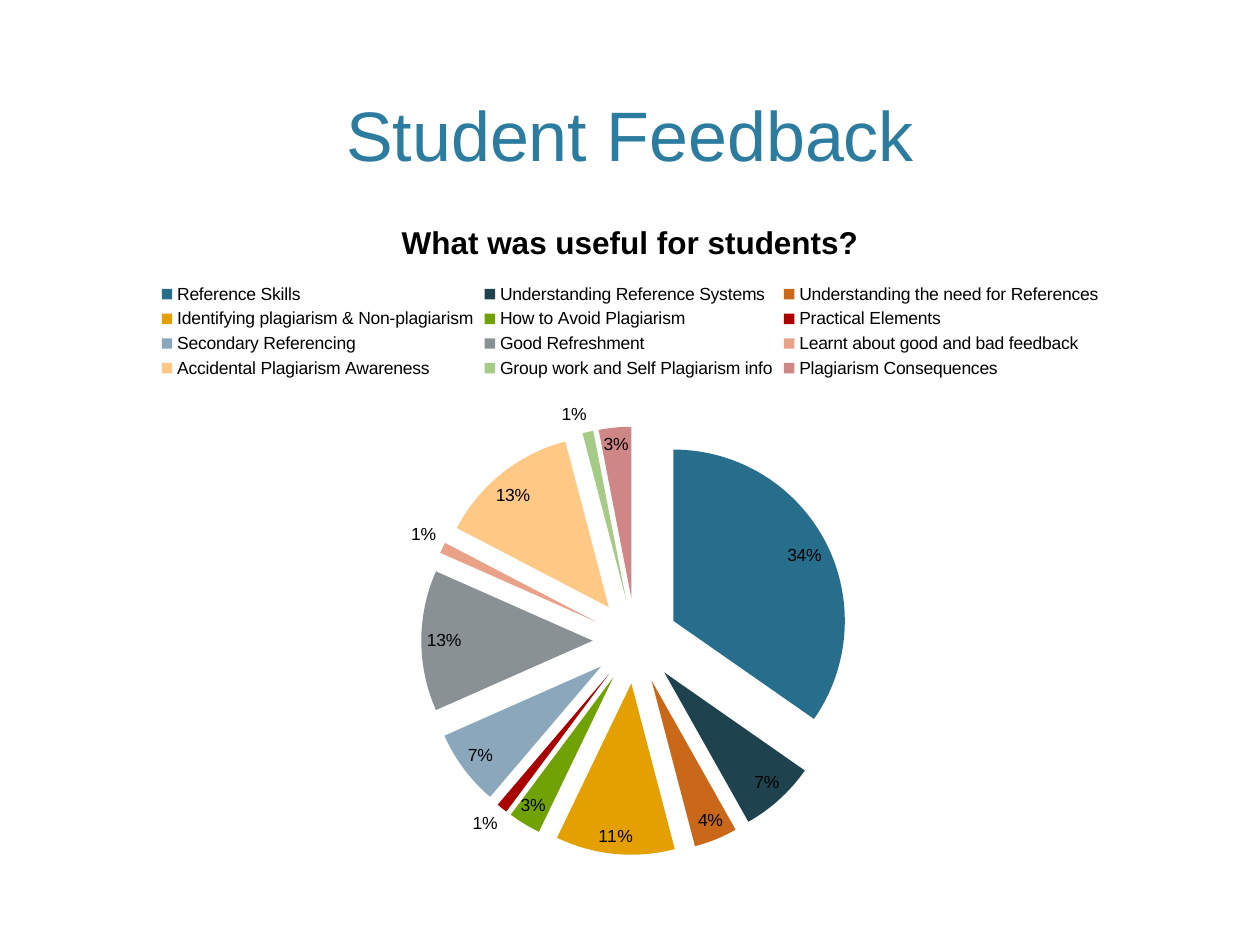
from lxml.etree import SubElement
from pptx import Presentation
from pptx.chart.data import CategoryChartData
from pptx.dml.color import RGBColor
from pptx.enum.chart import XL_CHART_TYPE, XL_LABEL_POSITION, XL_LEGEND_POSITION
from pptx.enum.text import MSO_ANCHOR, PP_ALIGN
from pptx.oxml import parse_xml
from pptx.oxml.ns import nsdecls, qn
from pptx.util import Inches, Pt

# Content: topic, share in percent, slice colour
TITLE = "Student Feedback"
CHART_TITLE = "What was useful for students?"
SLICES = [
    ("Reference Skills", 34, "276E8D"),
    ("Understanding Reference Systems", 7, "1F424F"),
    ("Understanding the need for References", 4, "C96818"),
    ("Identifying plagiarism & Non-plagiarism", 11, "E3A000"),
    ("How to Avoid Plagiarism", 3, "70A205"),
    ("Practical Elements", 1, "A90000"),
    ("Secondary Referencing", 7, "8AA7BC"),
    ("Good Refreshment", 13, "899195"),
    ("Learnt about good and bad feedback", 1, "E9A288"),
    ("Accidental Plagiarism Awareness", 13, "FFC885"),
    ("Group work and Self Plagiarism info", 1, "A5CB87"),
    ("Plagiarism Consequences", 3, "CE8686"),
]
COLORS = {"title": "2C7C9F", "text": "000000"}
FONT = "Arial"
EXPLOSION = 25
WIDTH, HEIGHT = Inches(10), Inches(7.5)
MARGIN = Inches(0.6)
# Pie before explosion, as shares of the chart; slices reach 25% further out
PLOT = {"x": 0.35, "y": 0.4, "w": 0.31, "h": 0.5}


def format_font(font, size, color="text", bold=False):
    font.name = FONT
    font.size = Pt(size)
    font.bold = bold
    font.color.rgb = RGBColor.from_string(COLORS[color])


def write_text(frame, text, align=PP_ALIGN.CENTER, **style):
    paragraph = frame.paragraphs[0]
    paragraph.alignment = align
    run = paragraph.add_run()
    run.text = text
    format_font(run.font, **style)


def place_plot(chart):
    plot_area = chart.plots[0]._element.getparent()
    for old_layout in plot_area.findall(qn("c:layout")):
        plot_area.remove(old_layout)
    layout = parse_xml(f"<c:layout {nsdecls('c')}/>")
    manual = SubElement(layout, qn("c:manualLayout"))
    settings = {"layoutTarget": "inner", "xMode": "edge", "yMode": "edge", **PLOT}
    for tag, value in settings.items():
        SubElement(manual, qn(f"c:{tag}")).set("val", str(value))
    plot_area.insert(0, layout)


presentation = Presentation()
presentation.slide_width, presentation.slide_height = WIDTH, HEIGHT
slide = presentation.slides.add_slide(presentation.slide_layouts[5])

# Title
title = slide.shapes.title
title.left, title.top = MARGIN, Inches(0.48)
title.width, title.height = WIDTH - 2 * MARGIN, Inches(0.96)
title.text_frame.vertical_anchor = MSO_ANCHOR.BOTTOM
write_text(title.text_frame, TITLE, size=40, color="title")

# Pie chart
data = CategoryChartData(number_format='0"%"')
data.categories = [topic for topic, _, _ in SLICES]
data.add_series("Series 1", [share for _, share, _ in SLICES])
chart = slide.shapes.add_chart(
    XL_CHART_TYPE.PIE, MARGIN, Inches(1.55), WIDTH - 2 * MARGIN, Inches(5.44), data
).chart
format_font(chart.font, 10)
chart.has_title = True
write_text(chart.chart_title.text_frame, CHART_TITLE, size=18, bold=True)
chart.has_legend = True
chart.legend.position = XL_LEGEND_POSITION.TOP
chart.legend.include_in_layout = False
format_font(chart.legend.font, 10)
place_plot(chart)

# Slices, pulled apart
plot = chart.plots[0]
plot.vary_by_categories = True
series = plot.series[0]
for index, (_, _, color) in enumerate(SLICES):
    point = series.points[index]
    point.format.fill.solid()
    point.format.fill.fore_color.rgb = RGBColor.from_string(color)
    explosion = parse_xml(f'<c:explosion {nsdecls("c")} val="{EXPLOSION}"/>')
    series._element.findall(qn("c:dPt"))[index].find(qn("c:spPr")).addprevious(explosion)

# Percent labels
labels = series.data_labels
labels.show_value = True
labels.number_format = '0"%"'
labels.number_format_is_linked = False
labels.position = XL_LABEL_POSITION.BEST_FIT
format_font(labels.font, 10)

presentation.save("out.pptx")
